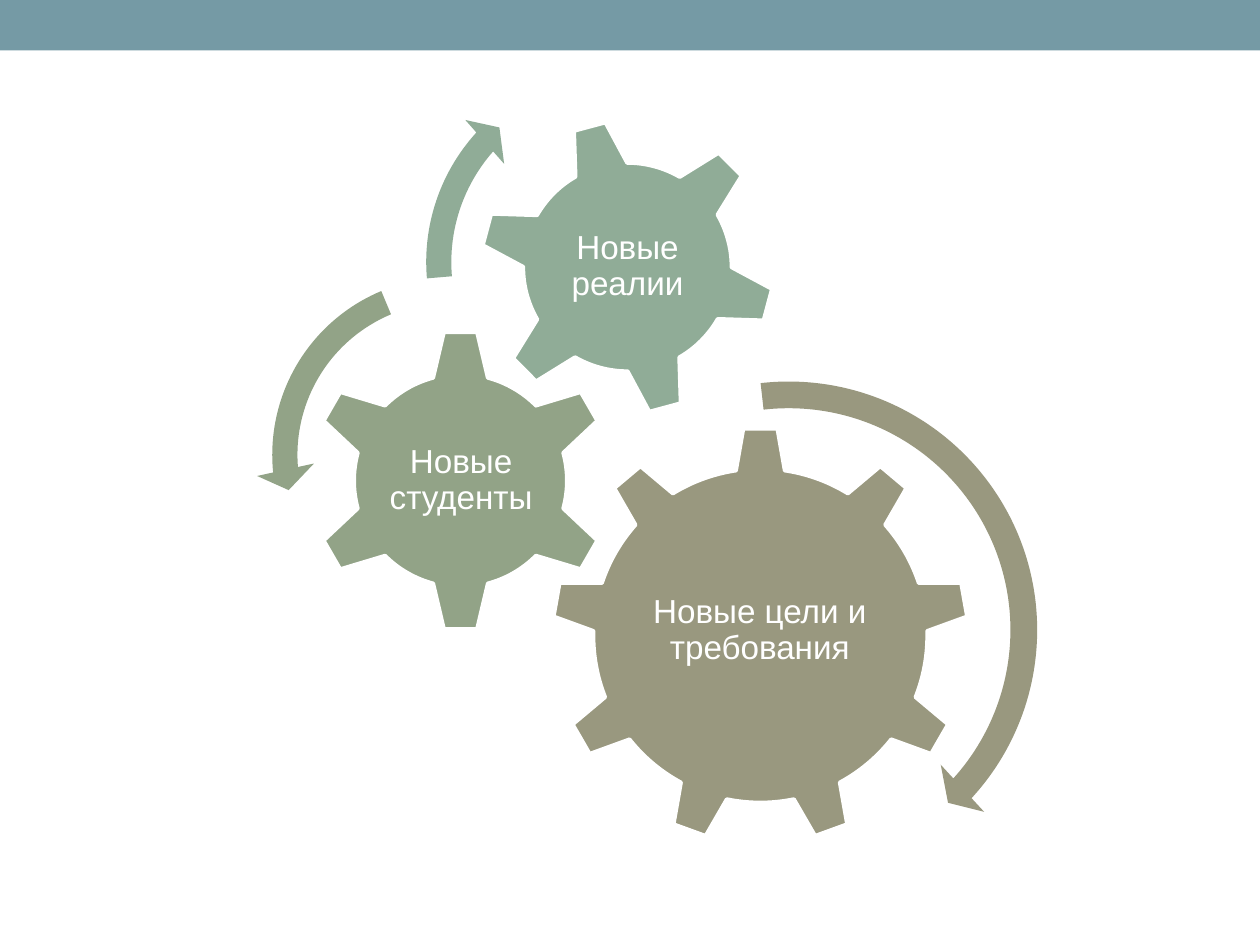
from pptx import Presentation
from pptx.dml.color import RGBColor
from pptx.enum.shapes import MSO_SHAPE
from pptx.enum.text import MSO_ANCHOR, PP_ALIGN
from pptx.util import Inches, Pt

BAR, OLIVE, SAGE, MINT, WHITE = "759AA5", "99987F", "92A387", "90AC97", "FFFFFF"

GEARS = [
    (MSO_SHAPE.GEAR_9, 4.38, 3.39, 3.31, 0, OLIVE,
     "Новые цели и требования", (5.04, 4.16, 1.98, 1.7)),
    (MSO_SHAPE.GEAR_6, 2.45, 2.61, 2.41, 0, SAGE,
     "Новые студенты", (3.06, 3.22, 1.2, 1.19)),
    (MSO_SHAPE.GEAR_6, 3.8, 0.94, 2.36, 345, MINT,
     "Новые реалии", (4.32, 1.46, 1.32, 1.32)),
]
ARROWS = [
    (MSO_SHAPE.CIRCULAR_ARROW, 4.14, 2.88, 4.24, OLIVE,
     (0.05, 2.99, 25.41, 158.1, 0.06)),
    (MSO_SHAPE.LEFT_CIRCULAR_ARROW, 2.03, 2.07, 3.08, SAGE,
     (0.065, 4.3, 104.89, 148.38, 0.075)),
    (MSO_SHAPE.CIRCULAR_ARROW, 3.25, 0.42, 3.32, MINT,
     (0.06, 3.94, 133.14, 105.08, 0.07)),
]


def color(code):
    return RGBColor.from_string(code)


def draw(kind, box, fill, edge=None, turn=0, adjust=()):
    shape = slide.shapes.add_shape(kind, *map(Inches, box))
    shape.shadow.inherit = False
    shape.fill.solid()
    shape.fill.fore_color.rgb = color(fill)
    if edge:
        shape.line.color.rgb = color(edge)
        shape.line.width = Pt(2.08)
    else:
        shape.line.fill.background()
    shape.rotation = turn
    for i, value in enumerate(adjust):
        shape.adjustments[i] = value


def write(text, box, size=19, font="Arial", ink=WHITE):
    frame = slide.shapes.add_textbox(*map(Inches, box)).text_frame
    frame.word_wrap = True
    frame.vertical_anchor = MSO_ANCHOR.MIDDLE
    frame.margin_left = frame.margin_right = Inches(0.03)
    frame.margin_top = frame.margin_bottom = Inches(0.03)
    para = frame.paragraphs[0]
    para.alignment = PP_ALIGN.CENTER
    para.line_spacing = 0.9
    run = para.add_run()
    run.text = text
    run.font.size = Pt(size)
    run.font.name = font
    run.font.color.rgb = color(ink)


deck = Presentation()
deck.slide_width, deck.slide_height = Inches(10), Inches(7.5)
slide = deck.slides.add_slide(deck.slide_layouts[6])

draw(MSO_SHAPE.RECTANGLE, (0, 0, 10, 0.4), BAR)
for kind, left, top, side, turn, fill, text, box in GEARS:
    draw(kind, (left, top, side, side), fill, edge=WHITE, turn=turn)
    write(text, box)
for kind, left, top, side, fill, adjust in ARROWS:
    draw(kind, (left, top, side, side), fill, adjust=adjust)

deck.save("out.pptx")
